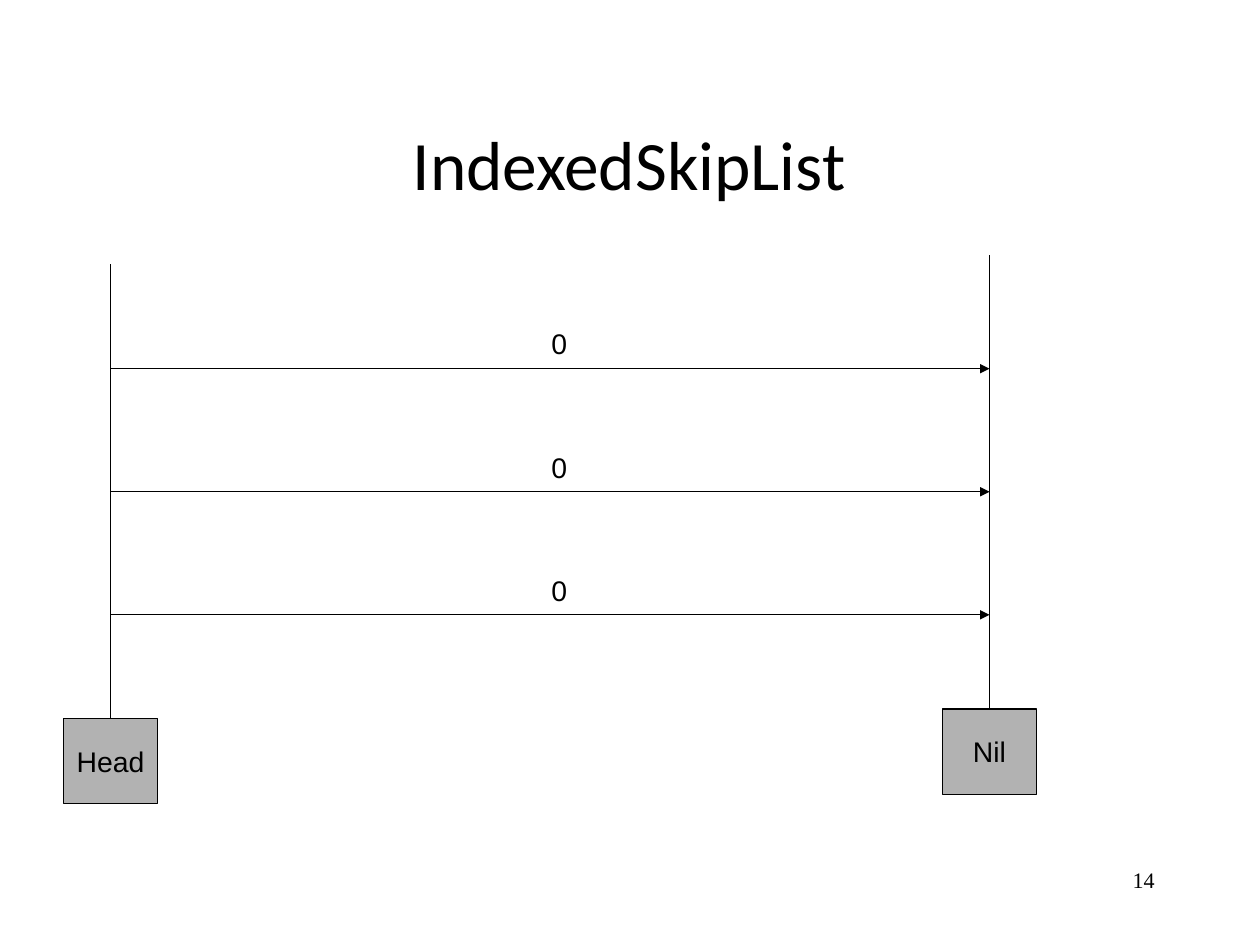
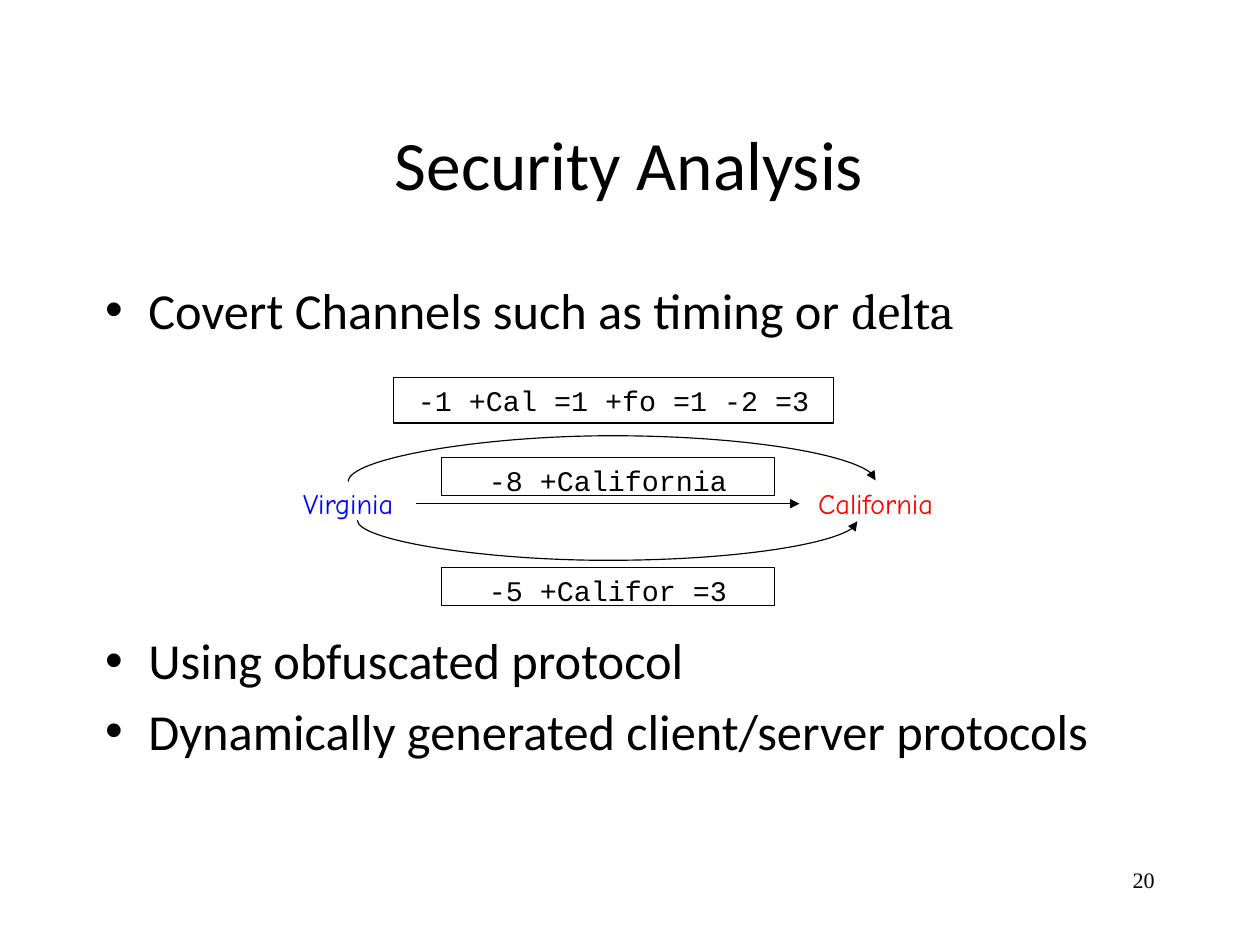
from dataclasses import dataclass

from lxml import etree
from pptx import Presentation
from pptx import util as u
from pptx.dml.color import RGBColor
from pptx.enum import shapes, text
from pptx.oxml.ns import qn

TITLE_ONLY = 5
TOP, LEFT, RIGHT = 0, 1, 3  # connection sites of a rectangle


@dataclass(frozen=True)
class Theme:
    ink: RGBColor = RGBColor(0, 0, 0)
    node: RGBColor = RGBColor(0xB2, 0xB2, 0xB2)
    before: RGBColor = RGBColor(0, 0, 0xFF)
    after: RGBColor = RGBColor(0xFF, 0, 0)
    heading_font: str = "Calibri"
    accent_font: str = "Cambria"
    label_font: str = "Arial"
    word_font: str = "Comic Neue"
    code_font: str = "Courier New"
    number_font: str = "Times New Roman"
    title_size: float = 44
    body_size: float = 32
    label_size: float = 18
    number_size: float = 14
    line_width: float = 0.75


THEME = Theme()


def place(shape, left, top, width, height):
    shape.left, shape.top = u.Inches(left), u.Inches(top)
    shape.width, shape.height = u.Inches(width), u.Inches(height)


def style_run(run, font, size, color=THEME.ink):
    run.font.name, run.font.size = font, u.Pt(size)
    run.font.color.rgb = color


def write(shape, words, font, size=THEME.label_size, color=THEME.ink,
          align=text.PP_ALIGN.CENTER, anchor=text.MSO_ANCHOR.TOP, wrap=True):
    frame = shape.text_frame
    frame.text = words
    frame.word_wrap, frame.vertical_anchor = wrap, anchor
    paragraph = frame.paragraphs[0]
    paragraph.alignment = align
    style_run(paragraph.runs[0], font, size, color)


def add_label(slide, words, left, top, width, height, font, **style):
    label = slide.shapes.add_textbox(0, 0, 0, 0)
    place(label, left, top, width, height)
    write(label, words, font, **style)
    return label


def add_box(slide, words, left, top, width, height, font, fill=None, **style):
    box = slide.shapes.add_shape(shapes.MSO_SHAPE.RECTANGLE, 0, 0, 0, 0)
    place(box, left, top, width, height)
    box.shadow.inherit = False
    if fill is None:
        box.fill.background()
    else:
        box.fill.solid()
        box.fill.fore_color.rgb = fill
    box.line.color.rgb = THEME.ink
    box.line.width = u.Pt(THEME.line_width)
    write(box, words, font, **style)
    return box


def add_line(slide, start, end, arrow=False,
             kind=shapes.MSO_CONNECTOR.STRAIGHT):
    line = slide.shapes.add_connector(kind, *map(u.Inches, start + end))
    line.line.color.rgb = THEME.ink
    line.line.width = u.Pt(THEME.line_width)
    if arrow:
        etree.SubElement(line.get_or_add_ln(), qn("a:tailEnd"), type="triangle")
    etree.SubElement(line.element.spPr, qn("a:effectLst"))
    return line


def add_arc_arrow(slide, left, right, y, bulge, upward):
    """Curved arrow from left to right; a quarter turn lays the connector flat."""
    thickness = 0.01
    middle, half = (left + right) / 2, (right - left) / 2
    ends = (y + half, y - half) if upward else (y - half, y + half)
    arc = add_line(slide, (middle + thickness / 2, ends[0]),
                   (middle - thickness / 2, ends[1]), True,
                   shapes.MSO_CONNECTOR.CURVE)
    properties = arc.element.spPr
    quarter_turns = 1 if upward else 3
    properties.find(qn("a:xfrm")).set("rot", str(quarter_turns * 90 * 60000))
    geometry = properties.find(qn("a:prstGeom"))
    adjustments = geometry.find(qn("a:avLst"))
    if adjustments is None:
        adjustments = etree.SubElement(geometry, qn("a:avLst"))
    share = round(bulge / thickness * 100000)
    etree.SubElement(adjustments, qn("a:gd"), name="adj1", fmla=f"val {share}")


def add_titled_slide(presentation, title, number):
    slide = presentation.slides.add_slide(presentation.slide_layouts[TITLE_ONLY])
    place(slide.shapes.title, 0.83, 0.74, 9.44, 1.39)
    write(slide.shapes.title, title, THEME.heading_font, size=THEME.title_size,
          anchor=text.MSO_ANCHOR.MIDDLE)
    add_label(slide, str(number), 7.96, 7.59, 2.32, 0.56, THEME.number_font,
              size=THEME.number_size, align=text.PP_ALIGN.RIGHT)
    return slide


def add_bullets(slide, left, top, width, height, bullets):
    """Each bullet is its space before, in points, and its (words, font) runs."""
    body = slide.shapes.add_textbox(0, 0, 0, 0)
    place(body, left, top, width, height)
    frame = body.text_frame
    frame.word_wrap = True
    for index, (space, runs) in enumerate(bullets):
        paragraph = frame.add_paragraph() if index else frame.paragraphs[0]
        properties = paragraph._p.get_or_add_pPr()
        properties.set("marL", str(u.Inches(0.38)))
        properties.set("indent", str(-u.Inches(0.38)))
        etree.SubElement(properties, qn("a:buFont"), typeface="Arial")
        etree.SubElement(properties, qn("a:buChar"), char="•")
        paragraph.space_before = u.Pt(space)
        for words, font in runs:
            run = paragraph.add_run()
            run.text = words
            style_run(run, font, THEME.body_size)


def add_tower(slide, name, left, top):
    """A vertical line standing on a named node; returns the line's x."""
    width, height, stem = 0.83, 0.75, 4
    node = add_box(slide, name, left, top + stem, width, height,
                   THEME.label_font, fill=THEME.node,
                   anchor=text.MSO_ANCHOR.MIDDLE, wrap=False)
    x = left + width / 2
    line = add_line(slide, (x, top + stem), (x, top))
    line.begin_connect(node, TOP)
    return x


def add_skip_list(slide, left, top):
    head = add_tower(slide, "Head", left, top + 0.08)
    nil = add_tower(slide, "Nil", left + 7.75, top)
    for level in range(3):
        y = top + 1 + level * 2.17 / 2
        add_line(slide, (head, y), (nil, y), arrow=True)
        add_label(slide, "0", left + 4.08, y - 0.42, 0.58, 0.4,
                  THEME.label_font)


def add_delta_diagram(slide, left, top):
    word_top = top + 0.91
    virginia = add_label(slide, "Virginia", left, word_top, 1.2, 0.4,
                         THEME.word_font, color=THEME.before)
    california = add_label(slide, "California", left + 4.58, word_top, 1.34, 0.4,
                           THEME.word_font, color=THEME.after)
    add_arc_arrow(slide, left + 0.6, left + 5.25, word_top, 0.41, upward=True)
    add_arc_arrow(slide, left + 0.68, left + 5.09, top + 1.26, 0.36, upward=False)
    y = word_top + 0.2
    arrow = add_line(slide, (left + 1.2, y), (left + 4.58, y), arrow=True)
    arrow.begin_connect(virginia, RIGHT)
    arrow.end_connect(california, LEFT)
    for words, x, offset, width, height in (
            ("-1 +Cal =1 +fo =1 -2 =3", 1, 0, 3.88, 0.4),
            ("-8 +California", 1.42, 0.7, 2.94, 0.34),
            ("-5 +Califor =3", 1.42, 1.67, 2.94, 0.34)):
        add_box(slide, words, left + x, top + offset, width, height,
                THEME.code_font)


def build_skip_list_slide(presentation):
    slide = add_titled_slide(presentation, "IndexedSkipList", 14)
    add_skip_list(slide, 0.56, 2.25)


def build_security_slide(presentation):
    slide = add_titled_slide(presentation, "Security Analysis", 20)
    plain = THEME.heading_font
    diagram_gap, bullet_gap = 184, 6.4
    add_bullets(slide, 0.83, 2.41, 9.44, 5, (
        (0, (("Covert Channels such as timing or ", plain),
             ("delta", THEME.accent_font))),
        (diagram_gap, (("Using obfuscated protocol", plain),)),
        (bullet_gap, (("Dynamically generated client/server protocols", plain),)),
    ))
    add_delta_diagram(slide, 2.47, 3.33)


def main():
    presentation = Presentation()
    presentation.slide_width = u.Inches(11.11)
    presentation.slide_height = u.Inches(8.33)
    build_skip_list_slide(presentation)
    build_security_slide(presentation)
    presentation.save("out.pptx")


if __name__ == "__main__":
    main()
